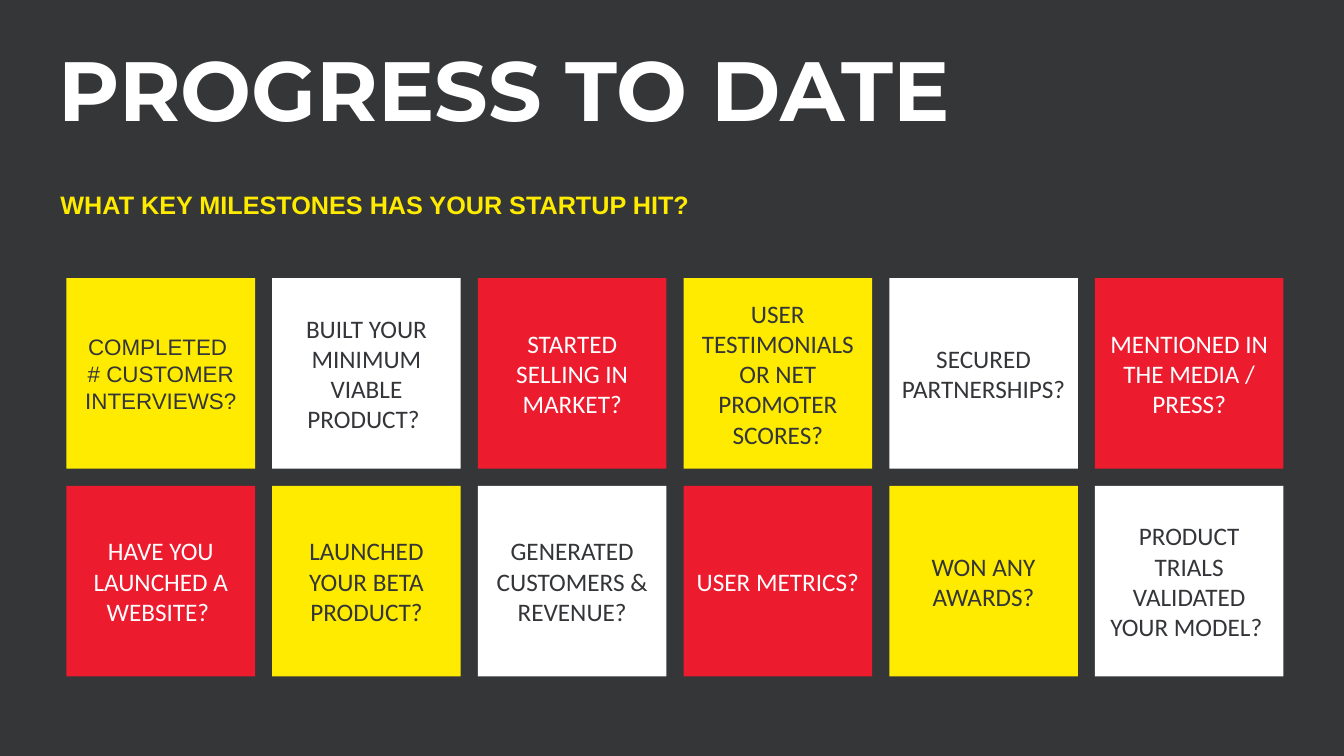
from pptx import Presentation
from pptx.dml.color import RGBColor
from pptx.enum.shapes import MSO_SHAPE
from pptx.enum.text import MSO_ANCHOR, MSO_AUTO_SIZE, PP_ALIGN
from pptx.util import Inches, Pt

CHARCOAL, INK = "343638", "333538"
YELLOW, WHITE, RED = "FEEB00", "FFFFFF", "EC1B2E"
TILE_COLOURS = [(YELLOW, INK), (WHITE, INK), (RED, WHITE)]  # fill, text

MILESTONES = [
    [
        "COMPLETED \n# CUSTOMER INTERVIEWS?",
        "BUILT YOUR MINIMUM VIABLE PRODUCT? ",
        "STARTED SELLING IN MARKET?",
        "USER TESTIMONIALS OR NET PROMOTER SCORES?",
        "SECURED PARTNERSHIPS? ",
        "MENTIONED IN THE MEDIA / PRESS?",
    ],
    [
        "HAVE YOU LAUNCHED A WEBSITE? ",
        "LAUNCHED YOUR BETA PRODUCT?",
        "GENERATED CUSTOMERS & REVENUE?",
        "USER METRICS?",
        "WON ANY AWARDS?",
        "PRODUCT TRIALS VALIDATED YOUR MODEL? ",
    ],
]


def colour(value):
    return RGBColor.from_string(value)


def set_font(paragraph, name, size, value, bold=False):
    font = paragraph.font
    font.name, font.size, font.bold = name, Pt(size), bold
    font.color.rgb = colour(value)


def add_title(page, left, top, width, height):
    title = page.shapes.title
    title.left, title.top = Inches(left), Inches(top)
    title.width, title.height = Inches(width), Inches(height)
    frame = title.text_frame
    frame.text = "PROGRESS TO DATE"
    frame.auto_size = MSO_AUTO_SIZE.NONE
    frame.vertical_anchor = MSO_ANCHOR.TOP
    paragraph = frame.paragraphs[0]
    paragraph.alignment = PP_ALIGN.LEFT
    paragraph.line_spacing = Pt(60)
    set_font(paragraph, "Montserrat", 60, WHITE, bold=True)


def add_question(page, left, top, width, height):
    box = page.shapes.add_textbox(Inches(left), Inches(top), Inches(width), Inches(height))
    frame = box.text_frame
    frame.word_wrap = True
    frame.margin_left = frame.margin_right = frame.margin_bottom = 0
    frame.margin_top = Inches(0.01)
    frame.text = "WHAT KEY MILESTONES HAS YOUR STARTUP HIT?"
    paragraph = frame.paragraphs[0]
    paragraph.line_spacing = 1.5
    set_font(paragraph, "Arial", 18, YELLOW, bold=True)


def add_tile(page, text, fill, ink, font, left, top, width, height):
    tile = page.shapes.add_shape(
        MSO_SHAPE.RECTANGLE, Inches(left), Inches(top), Inches(width), Inches(height)
    )
    tile.shadow.inherit = False
    tile.fill.solid()
    tile.fill.fore_color.rgb = colour(fill)
    tile.line.fill.background()
    frame = tile.text_frame
    frame.word_wrap = True
    frame.vertical_anchor = MSO_ANCHOR.MIDDLE
    frame.text = text
    for paragraph in frame.paragraphs:
        paragraph.alignment = PP_ALIGN.CENTER
        set_font(paragraph, *font, ink)


def add_milestones(page, left, top, width, height, gap_x=0.17, gap_y=0.17):
    """Fill the box with tiles whose colours shift one column per row."""
    rows, columns = len(MILESTONES), len(MILESTONES[0])
    tile_width = (width - gap_x * (columns - 1)) / columns
    tile_height = (height - gap_y * (rows - 1)) / rows
    for row, texts in enumerate(MILESTONES):
        for column, text in enumerate(texts):
            fill, ink = TILE_COLOURS[(column - row) % len(TILE_COLOURS)]
            font = ("Arial", 16) if row == column == 0 else ("Calibri", 18)
            add_tile(
                page, text, fill, ink, font,
                left + column * (tile_width + gap_x),
                top + row * (tile_height + gap_y),
                tile_width, tile_height,
            )


def main():
    deck = Presentation()
    deck.slide_width, deck.slide_height = Inches(13.33), Inches(7.5)
    page = deck.slides.add_slide(deck.slide_layouts[5])
    page.background.fill.solid()
    page.background.fill.fore_color.rgb = colour(CHARCOAL)
    add_title(page, 0.48, 0.49, 9.77, 0.94)
    add_question(page, 0.6, 1.72, 11.84, 0.41)
    add_milestones(page, 0.66, 2.76, 12.07, 3.95)
    deck.save("out.pptx")


if __name__ == "__main__":
    main()
